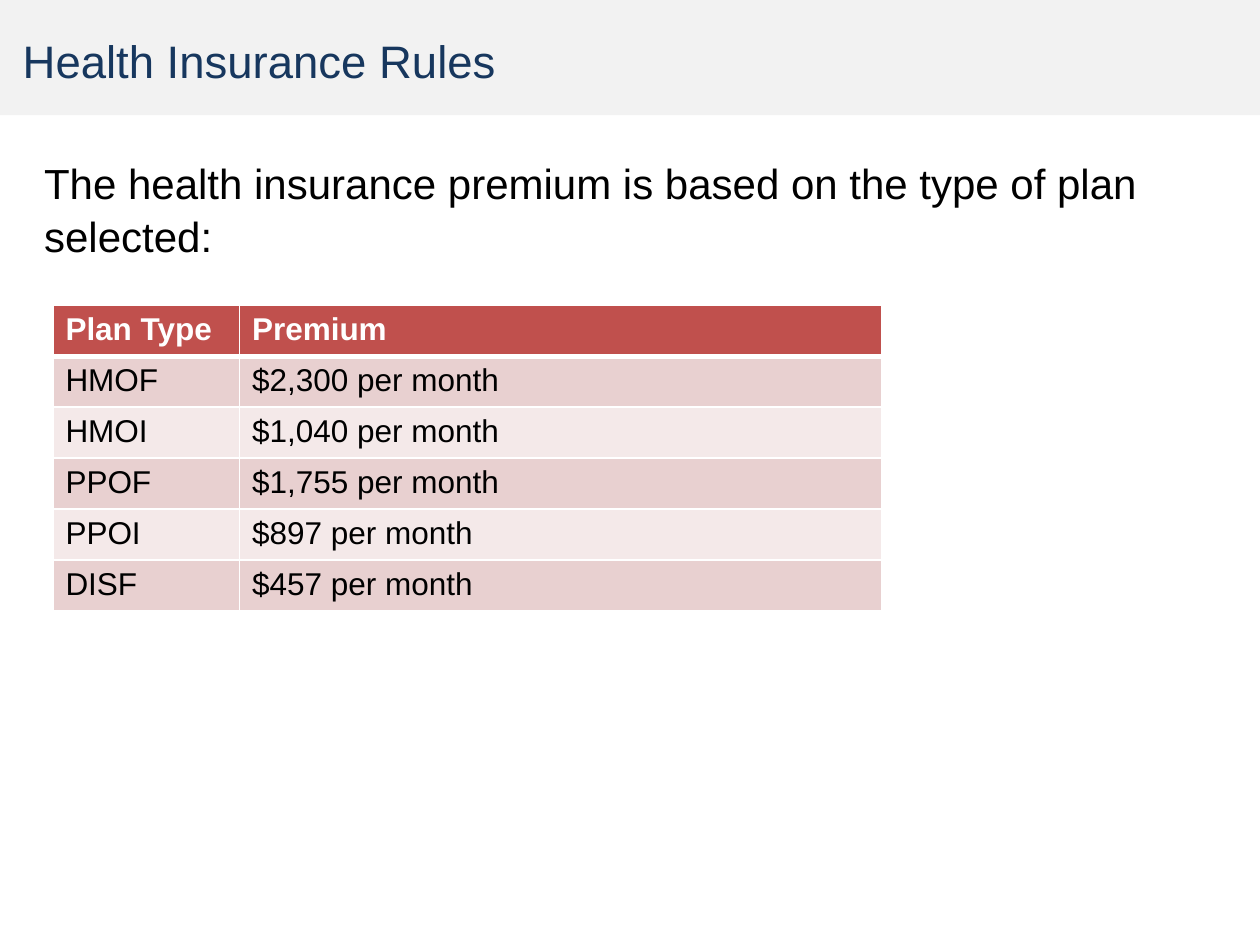
from lxml.etree import SubElement
from pptx import Presentation
from pptx.dml.color import RGBColor
from pptx.enum.shapes import MSO_SHAPE
from pptx.enum.text import MSO_ANCHOR, MSO_AUTO_SIZE, PP_ALIGN
from pptx.oxml.ns import qn
from pptx.util import Inches, Pt

WIDE, HIGH = Inches(10), Inches(7.5)
FONT = "Arial"
WHITE = RGBColor(0xFF, 0xFF, 0xFF)
BLACK = RGBColor(0x00, 0x00, 0x00)
NAVY = RGBColor(0x17, 0x37, 0x5E)
GREY = RGBColor(0xF2, 0xF2, 0xF2)
RED = RGBColor(0xC0, 0x50, 0x4D)
ROSE = RGBColor(0xE8, 0xD0, 0xD0)
PINK = RGBColor(0xF4, 0xE9, 0xE9)

PLANS = [
    ("Plan Type", "Premium"),
    ("HMOF", "$2,300 per month"),
    ("HMOI", "$1,040 per month"),
    ("PPOF", "$1,755 per month"),
    ("PPOI", "$897 per month"),
    ("DISF", "$457 per month"),
]


def write(frame, text, size, color=BLACK, bold=False, space=None):
    """Fill a text frame with one left-aligned, unbulleted paragraph."""
    frame.text = text
    frame.word_wrap = True
    para = frame.paragraphs[0]
    props = para._p.get_or_add_pPr()
    props.set("marL", "0")
    props.set("indent", "0")
    SubElement(props, qn("a:buNone"))
    para.alignment = PP_ALIGN.LEFT
    para.space_before = Pt(0)
    if space:
        para.line_spacing = space
    font = para.runs[0].font
    font.name, font.size, font.bold = FONT, Pt(size), bold
    font.color.rgb = color


def place(shape, box):
    shape.left, shape.top, shape.width, shape.height = box


def edge(cell, sides):
    """Draw white borders; sides maps a tag to a width in points."""
    props = cell._tc.get_or_add_tcPr()
    for spot, (tag, width) in enumerate(sides.items()):
        line = props.makeelement(qn(f"a:{tag}"), {"w": str(Pt(width))})
        fill = SubElement(line, qn("a:solidFill"))
        SubElement(fill, qn("a:srgbClr"), val=str(WHITE))
        props.insert(spot, line)


def head(slide, box):
    left, top, width, height = box
    # Grey band behind everything else
    band = slide.shapes.add_shape(MSO_SHAPE.RECTANGLE, *box)
    band.shadow.inherit = False
    band.fill.solid()
    band.fill.fore_color.rgb = GREY
    band.line.fill.background()
    slide.shapes._spTree.insert(2, band._element)
    # Title
    title = slide.shapes.title
    inset = int(width * 0.008)
    place(title, (left + inset, top + int(height * 0.27),
                  width - inset, int(height * 0.5)))
    title.text_frame.auto_size = MSO_AUTO_SIZE.NONE
    title.text_frame.vertical_anchor = MSO_ANCHOR.MIDDLE
    write(title.text_frame, "Health Insurance Rules", 26, NAVY)


def intro(slide, box):
    body = slide.placeholders[1]
    place(body, box)
    frame = body.text_frame
    frame.auto_size = MSO_AUTO_SIZE.NONE
    frame.vertical_anchor = MSO_ANCHOR.TOP
    frame.margin_top = Inches(0.08)
    write(frame, "The health insurance premium is based on the type of plan "
          "selected:", 24, space=1.05)


def rates(slide, box):
    width, height = box[2:]
    table = slide.shapes.add_table(len(PLANS), 2, *box).table
    first = int(width * 0.225)
    table.columns[0].width, table.columns[1].width = first, width - first
    for r, plan in enumerate(PLANS):
        table.rows[r].height = height // len(PLANS)
        for c, text in enumerate(plan):
            cell = table.cell(r, c)
            cell.fill.solid()
            cell.fill.fore_color.rgb = (RED if r == 0
                                        else ROSE if r % 2 else PINK)
            write(cell.text_frame, text, 18,
                  BLACK if r else WHITE, bold=r == 0)
            edge(cell, {"lnL": 1, "lnR": 1, "lnT": 3 if r == 1 else 1,
                        "lnB": 3 if r == 0 else 1})


def share(left, top, width, height):
    """Turn shares of the slide's size into a box."""
    return (int(WIDE * left), int(HIGH * top),
            int(WIDE * width), int(HIGH * height))


def main():
    deck = Presentation()
    deck.slide_width, deck.slide_height = WIDE, HIGH
    slide = deck.slides.add_slide(deck.slide_layouts[1])
    head(slide, share(0, 0, 1, 0.122))
    intro(slide, share(0.025, 0.153, 0.96, 0.844))
    rates(slide, share(0.042, 0.323, 0.658, 0.324))
    deck.save("out.pptx")


if __name__ == "__main__":
    main()
